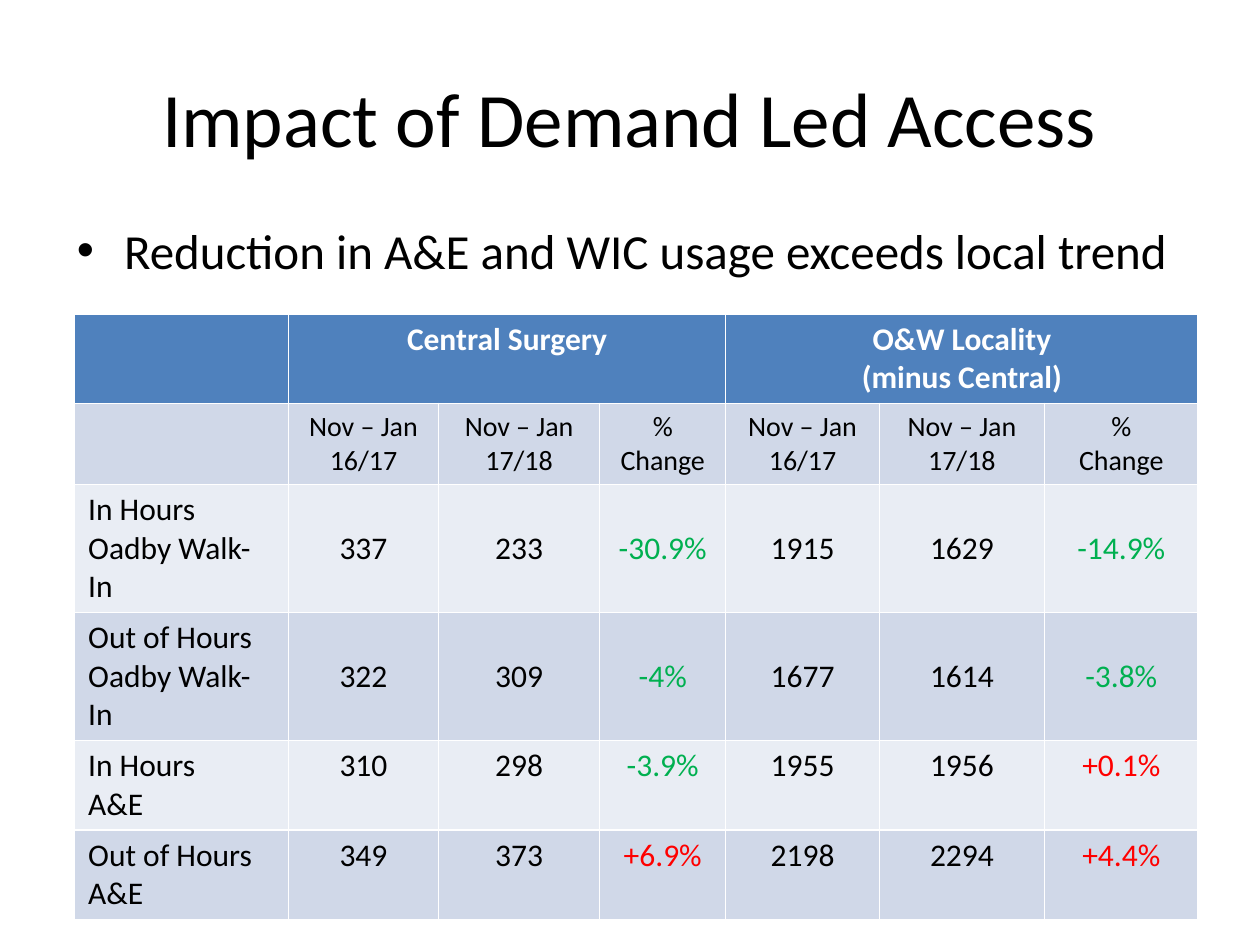
from pptx import Presentation
from pptx.dml.color import RGBColor
from pptx.enum.text import MSO_ANCHOR as Anchor, PP_ALIGN as Align
from pptx.util import Inches, Pt

BLACK = RGBColor(0x00, 0x00, 0x00)
WHITE = RGBColor(0xFF, 0xFF, 0xFF)
GREEN = RGBColor(0x00, 0xB0, 0x50)
RED = RGBColor(0xFF, 0x00, 0x00)
HEADER_FILL = RGBColor(0x4F, 0x81, 0xBD)
BAND_FILLS = (RGBColor(0xE9, 0xED, 0xF4), RGBColor(0xD0, 0xD8, 0xE8))

# The slide is a grid of 100 columns by 75 rows
GRID_COLS, GRID_ROWS = 100, 75

COL_WIDTHS = (17, 11.9, 12.8, 10, 12.2, 13.1, 12.2)
ROW_HEIGHTS = (6.1, 5.5, 8.7, 6.1, 6.1, 6.1)
PERIODS = ["Nov – Jan 16/17", "Nov – Jan 17/18", "%\nChange"]
ROWS = [
    ["", "Central Surgery", "", "", "O&W Locality\n(minus Central)", "", ""],
    ["", *PERIODS, *PERIODS],
    ["In Hours\nOadby Walk-In", "337", "233", "-30.9%", "1915", "1629", "-14.9%"],
    ["Out of Hours\nOadby Walk-In", "322", "309", "-4%", "1677", "1614", "-3.8%"],
    ["In Hours\nA&E", "310", "298", "-3.9%", "1955", "1956", "+0.1%"],
    ["Out of Hours A&E", "349", "373", "+6.9%", "2198", "2294", "+4.4%"],
]


class SlideBuilder:
    font = "Calibri"

    def __init__(self, prs):
        self.col = prs.slide_width / GRID_COLS
        self.row = prs.slide_height / GRID_ROWS
        self.slide = prs.slides.add_slide(prs.slide_layouts[1])

    def box(self, left, top, width, height):
        return (int(left * self.col), int(top * self.row),
                int(width * self.col), int(height * self.row))

    def set_text(self, tf, text, size, color=BLACK, bold=False, align=None):
        tf.text = text
        for p in tf.paragraphs:
            p.alignment = align
            for r in p.runs:
                r.font.name = self.font
                r.font.size = Pt(size)
                r.font.bold = bold
                r.font.color.rgb = color

    def placeholder(self, index, text, size, box, align=None):
        sp = self.slide.placeholders[index]
        sp.left, sp.top, sp.width, sp.height = self.box(*box)
        self.set_text(sp.text_frame, text, size, align=align)

    def table(self, left, top, rows, widths, heights):
        box = self.box(left, top, sum(widths), sum(heights))
        table = self.slide.shapes.add_table(len(rows), len(widths), *box).table
        for column, width in zip(table.columns, widths):
            column.width = int(width * self.col)
        for row, height in zip(table.rows, heights):
            row.height = int(height * self.row)
        for i, texts in enumerate(rows):
            for j, text in enumerate(texts):
                self.cell(table.cell(i, j), text, i, j)
        return table

    def cell(self, cell, text, i, j):
        header = i == 0
        cell.margin_left = cell.margin_right = Inches(0.11)
        cell.fill.solid()
        cell.fill.fore_color.rgb = HEADER_FILL if header else BAND_FILLS[i % 2]
        # Walk-in figures sit level with the middle of their label
        if "Walk-In" in ROWS[i][0] and j > 0:
            cell.vertical_anchor = Anchor.MIDDLE
        # Falls are green, rises are red
        color = {"-": GREEN, "+": RED}.get(text[:1], WHITE if header else BLACK)
        self.set_text(cell.text_frame, text, 16 if i == 1 else 18, color, header,
                      Align.CENTER if j else Align.LEFT)


def main():
    prs = Presentation()
    prs.slide_width, prs.slide_height = Inches(10), Inches(7.5)
    s = SlideBuilder(prs)

    # Title and bullet
    s.placeholder(0, "Impact of Demand Led Access", 44, (5, 3, 90, 12.5), Align.CENTER)
    s.placeholder(1, "Reduction in A&E and WIC usage exceeds local trend", 28,
                  (5.1, 17, 90, 49.5))

    # Usage table, with one merged heading per group of three columns
    table = s.table(5.9, 24.9, ROWS, COL_WIDTHS, ROW_HEIGHTS)
    for first in (1, 4):
        table.cell(0, first).merge(table.cell(0, first + 2))

    prs.save("out.pptx")


if __name__ == "__main__":
    main()
